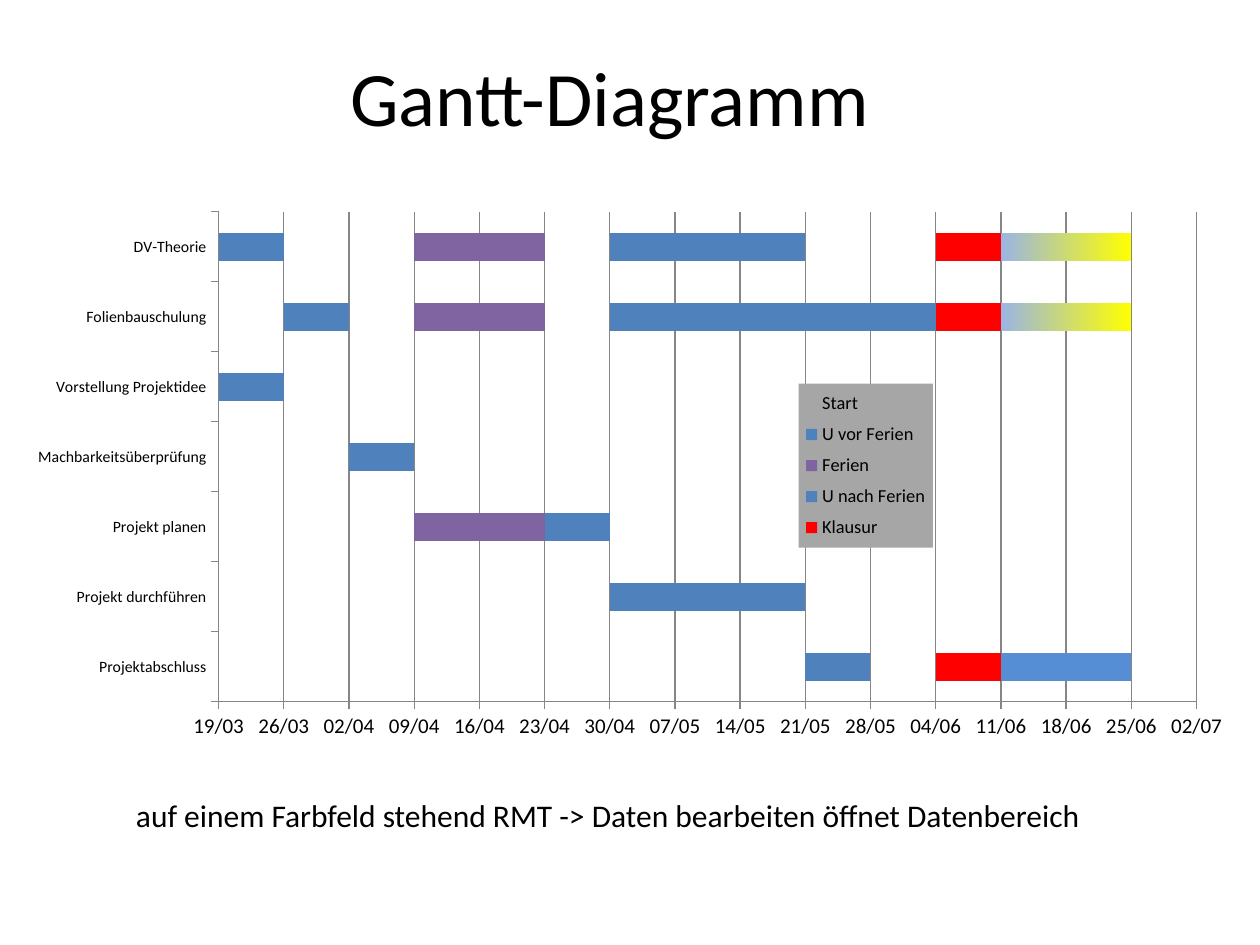
from lxml.etree import fromstring
from pptx import Presentation
from pptx.chart.data import CategoryChartData
from pptx.dml.color import RGBColor
from pptx.enum.chart import XL_CHART_TYPE as ChartType
from pptx.enum.chart import XL_LEGEND_POSITION as LegendPosition
from pptx.enum.chart import XL_TICK_MARK as TickMark
from pptx.enum.text import MSO_ANCHOR as Anchor
from pptx.enum.text import PP_ALIGN as Align
from pptx.oxml.ns import nsdecls, qn
from pptx.util import Pt

FONT = "Calibri"
BLACK = RGBColor(0x00, 0x00, 0x00)
GREY = RGBColor(0x86, 0x86, 0x86)
BLUE = RGBColor(0x4F, 0x81, 0xBD)
PURPLE = RGBColor(0x80, 0x64, 0xA2)
RED = RGBColor(0xFF, 0x00, 0x00)
PALE_BLUE = RGBColor(0x9A, 0xB5, 0xE4)
YELLOW = RGBColor(0xFF, 0xFF, 0x00)
BRIGHT_BLUE = RGBColor(0x55, 0x8E, 0xD5)
LEGEND_GREY = RGBColor(0xA6, 0xA6, 0xA6)

# Content: tasks from bottom to top, dates as day numbers, durations in days
TITLE = "Gantt-Diagramm"
NOTE = "auf einem Farbfeld stehend RMT -> Daten bearbeiten öffnet Datenbereich"
FIRST_DAY, WEEK, WEEKS = 43909, 7, 15
TASKS = ["Projektabschluss", "Projekt durchführen", "Projekt planen",
         "Machbarkeitsüberprüfung", "Vorstellung Projektidee",
         "Folienbauschulung", "DV-Theorie"]
PHASES = [  # name, values, fill (None for a gap, a pair for a gradient)
    ("Start", [43972, 43951, 43930, 43923, 43909, 43916, 43909], None),
    ("U vor Ferien", [None, None, None, 7, 7, 7, 7], BLUE),
    ("Series 3", [None, None, None, None, None, 7, 14], None),
    ("Ferien", [None, None, 14, None, None, 14, 14], PURPLE),
    ("Series 5", [None, None, None, None, None, 7, 7], None),
    ("U nach Ferien", [7, 21, 7, None, None, 35, 21], BLUE),
    ("Series 7", [7, None, None, None, None, 0, 14], None),
    ("Klausur", [7, None, None, None, None, 7, 7], RED),
    ("Rest", [14, None, None, None, None, 14, 14], (PALE_BLUE, YELLOW)),
]
LEGEND_HIDES = [0, 2, 4, 6]  # legend entries count from the last phase


def add_text(page, text, left, top, width, height, size,
             align=Align.LEFT, anchor=Anchor.TOP):
    box = page.shapes.add_textbox(Pt(left), Pt(top), Pt(width), Pt(height))
    frame = box.text_frame
    frame.word_wrap = True
    frame.vertical_anchor = anchor
    para = frame.paragraphs[0]
    para.alignment = align
    span = para.add_run()
    span.text = text
    span.font.name, span.font.size = FONT, Pt(size)
    span.font.color.rgb = BLACK


def chart_xml(tag, content):
    return fromstring(f"<c:{tag} {nsdecls('c', 'a')}>{content}</c:{tag}>")


def manual_layout(x, y, w, h, inner=False):
    target = '<c:layoutTarget val="inner"/>' if inner else ""
    places = "".join(f'<c:{key} val="{value}"/>'
                     for key, value in zip("xywh", (x, y, w, h)))
    modes = '<c:xMode val="edge"/><c:yMode val="edge"/>'
    return chart_xml("layout", f"<c:manualLayout>{target}{modes}{places}</c:manualLayout>")


def set_layout(parent, layout, index):
    for old in parent.findall(qn("c:layout")):
        parent.remove(old)
    parent.insert(index, layout)


def paint(fill, colour):
    if colour is None:
        fill.background()
    elif isinstance(colour, RGBColor):
        fill.solid()
        fill.fore_color.rgb = colour
    else:
        fill.gradient()
        fill.gradient_angle = 0
        for stop, shade in zip(fill.gradient_stops, colour):
            stop.color.rgb = shade


def style_axis(axis, size):
    axis.major_tick_mark = TickMark.OUTSIDE
    axis.minor_tick_mark = TickMark.NONE
    axis.format.line.color.rgb = GREY
    axis.tick_labels.font.size = Pt(size)


def add_legend(chart):
    chart.has_legend = True
    legend = chart.legend
    legend.position = LegendPosition.RIGHT
    legend.include_in_layout = True
    legend.font.size = Pt(10.5)
    element = legend._element
    for offset, entry in enumerate(LEGEND_HIDES, start=1):
        element.insert(offset, chart_xml(
            "legendEntry", f'<c:idx val="{entry}"/><c:delete val="1"/>'))
    set_layout(element, manual_layout(0.634, 0.341, 0.11, 0.293), len(LEGEND_HIDES) + 1)
    element.find(qn("c:txPr")).addprevious(chart_xml(
        "spPr", f'<a:solidFill><a:srgbClr val="{LEGEND_GREY}"/></a:solidFill>'))


def add_gantt(page, left, top, width, height):
    data = CategoryChartData()
    data.categories = TASKS
    for name, values, _ in PHASES:
        data.add_series(name, values)
    chart = page.shapes.add_chart(ChartType.BAR_STACKED, Pt(left), Pt(top),
                                  Pt(width), Pt(height), data).chart
    chart.has_title = False
    chart.font.name, chart.font.size = FONT, Pt(18)
    chart.font.color.rgb = BLACK

    # Bars
    plot = chart.plots[0]
    plot.gap_width, plot.overlap = 150, 100
    plot.vary_by_categories = False
    for series, (_, _, colour) in zip(plot.series, PHASES):
        paint(series.format.fill, colour)
    paint(plot.series[-1].points[0].format.fill, BRIGHT_BLUE)

    # Axes
    style_axis(chart.category_axis, 9)
    dates = chart.value_axis
    style_axis(dates, 12)
    dates.minimum_scale = FIRST_DAY
    dates.maximum_scale = FIRST_DAY + WEEK * WEEKS
    dates.major_unit = WEEK
    dates.has_major_gridlines = True
    dates.major_gridlines.format.line.color.rgb = GREY
    dates.tick_labels.number_format = "dd/mm"
    dates.tick_labels.number_format_is_linked = False

    plot_area = chart._chartSpace.chart.plotArea
    set_layout(plot_area, manual_layout(0.159, 0.034, 0.801, 0.876, inner=True), 0)
    add_legend(chart)


def main():
    deck = Presentation()
    deck.slide_width, deck.slide_height = Pt(720), Pt(540)
    page = deck.slides.add_slide(deck.slide_layouts[6])
    add_text(page, TITLE, 42.5, 15, 612, 79, 44, Align.CENTER, Anchor.MIDDLE)
    add_gantt(page, 14, 110.2, 697.7, 319.7)
    add_text(page, NOTE, 70.6, 451.4, 612, 29, 18)
    deck.save("out.pptx")


if __name__ == "__main__":
    main()
